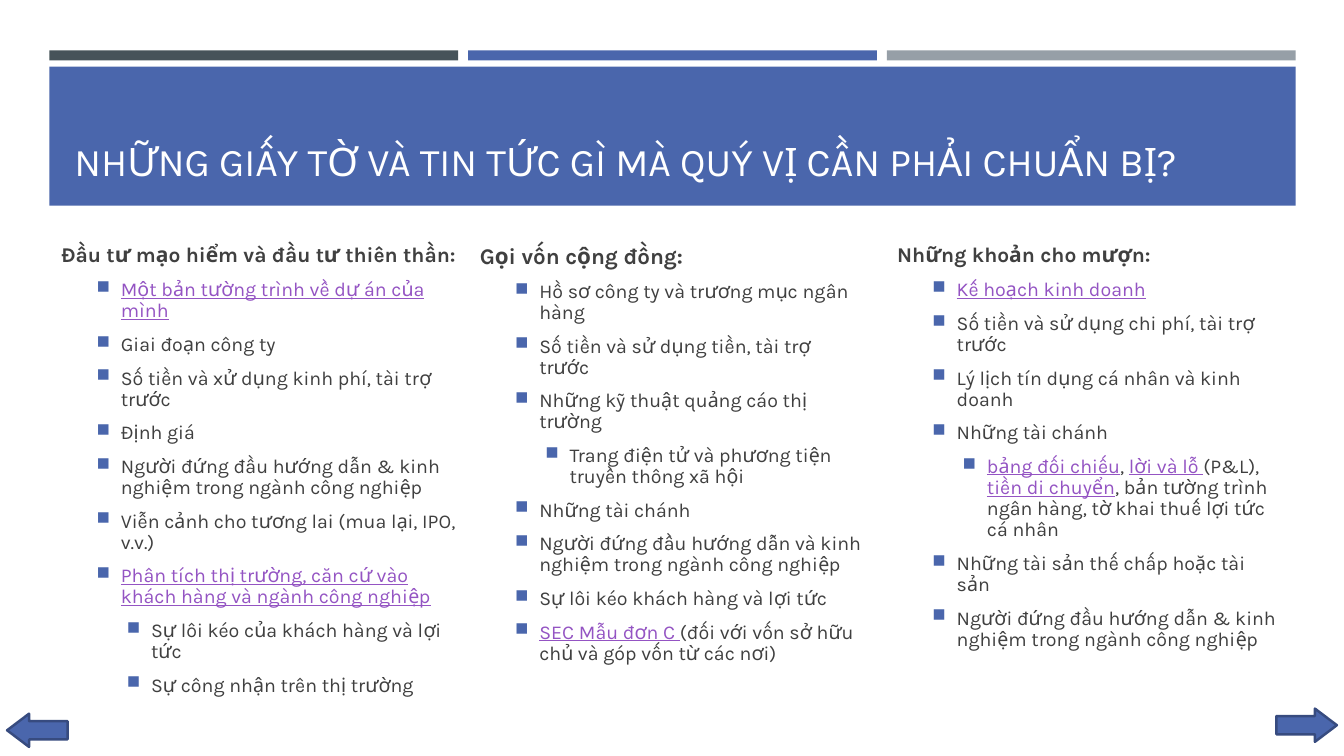
from lxml import etree
from pptx import Presentation
from pptx.dml.color import RGBColor
from pptx.enum.shapes import MSO_SHAPE
from pptx.enum.text import MSO_ANCHOR
from pptx.oxml.ns import qn
from pptx.util import Emu, Pt

RECTANGLE = MSO_SHAPE.RECTANGLE
RIGHT_ARROW = MSO_SHAPE.RIGHT_ARROW
BOTTOM = MSO_ANCHOR.BOTTOM

PX = 9144  # 100 px to the inch
FONT = "Karla"
BLUE, SLATE, GREY = "4A66AC", "465359", "969FA7"
DARK_BLUE, TEXT, LINK, WHITE = "374B7F", "404040", "9454C3", "FFFFFF"

TITLE = "NHỮNG GIẤY TỜ VÀ TIN TỨC GÌ MÀ QUÝ VỊ CẦN PHẢI CHUẨN BỊ?"

# Each item is (level, text); underscores enclose the parts styled as links.
COLUMNS = [
    ((51, 238, 423, 470), "Đầu tư mạo hiểm và đầu tư thiên thần:", 15, [
        (1, "_Một bản tường trình về dự án của mình_"),
        (1, "Giai đoạn công ty"),
        (1, "Số tiền và xử dụng kinh phí, tài trợ trước"),
        (1, "Định giá"),
        (1, "Người đứng đầu hướng dẫn & kinh nghiệm trong ngành công nghiệp"),
        (1, "Viễn cảnh cho tương lai (mua lại, IPO, v.v.)"),
        (1, "_Phân tích thị trường, căn cứ vào khách hàng và ngành công nghiệp_"),
        (2, "Sự lôi kéo của khách hàng và lợi tức"),
        (2, "Sự công nhận trên thị trường"),
    ]),
    ((466, 238, 402, 421), "Gọi vốn cộng đồng:", 16, [
        (1, "Hồ sơ công ty và trương mục ngân hàng"),
        (1, "Số tiền và sử dụng tiền, tài trợ trước"),
        (1, "Những kỹ thuật quảng cáo thị trường"),
        (2, "Trang điện tử và phương tiện truyền thông xã hội"),
        (1, "Những tài chánh"),
        (1, "Người đứng đầu hướng dẫn và kinh nghiệm trong ngành công nghiệp"),
        (1, "Sự lôi kéo khách hàng và lợi tức"),
        (1, "_SEC Mẫu đơn C _(đối với vốn sở hữu chủ và góp vốn từ các nơi)"),
    ]),
    ((880, 238, 402, 440), "Những khoản cho mượn:", 15, [
        (1, "_Kế hoạch kinh doanh_"),
        (1, "Số tiền và sử dụng chi phí, tài trợ trước"),
        (1, "Lý lịch tín dụng cá nhân và kinh doanh"),
        (1, "Những tài chánh"),
        (2, "_bảng đối chiếu_, _lời và lỗ _(P&L), _tiền di chuyển_, "
            "bản tường trình ngân hàng, tờ khai thuế lợi tức cá nhân"),
        (1, "Những tài sản thế chấp hoặc tài sản"),
        (1, "Người đứng đầu hướng dẫn & kinh nghiệm trong ngành công nghiệp"),
    ]),
]


def color(hex_string):
    return RGBColor.from_string(hex_string)


def px(*lengths):
    return [Emu(round(length * PX)) for length in lengths]


def add_filled_shape(slide, kind, box, fill):
    shape = slide.shapes.add_shape(kind, *px(*box))
    shape.shadow.inherit = False
    shape.fill.solid()
    shape.fill.fore_color.rgb = color(fill)
    shape.line.fill.background()
    return shape


def add_text_box(slide, box):
    text_frame = slide.shapes.add_textbox(*px(*box)).text_frame
    text_frame.word_wrap = True
    return text_frame


def format_run(run, size, hex_string, bold=False, underline=False):
    run.font.name = FONT
    run.font.size = Pt(size)
    run.font.color.rgb = color(hex_string)
    run.font.bold = bold
    run.font.underline = underline


def space_paragraph(paragraph, size):
    paragraph.line_spacing = 0.9
    paragraph.space_before = Pt(0.2 * size)
    paragraph.space_after = Pt(6)


def set_bullet(paragraph, level):
    paragraph.level = level
    properties = paragraph._p.get_or_add_pPr()
    left, hanging = px(29 + 30 * level, -24)
    properties.set("marL", str(left))
    properties.set("indent", str(hanging))
    bullet_color = etree.SubElement(properties, qn("a:buClr"))
    etree.SubElement(bullet_color, qn("a:srgbClr"), val=BLUE)
    etree.SubElement(properties, qn("a:buSzPct"), val="92000")
    etree.SubElement(properties, qn("a:buChar"), char="■")


def add_header(slide, box):
    left, top, width, height = box
    # Three thin bars with equal gaps above the title band
    gap, bar_height, band_offset = 10, 10, 16
    bar_width = (width - 2 * gap) / 3
    for index, fill in enumerate((SLATE, BLUE, GREY)):
        bar_left = left + index * (bar_width + gap)
        add_filled_shape(slide, RECTANGLE, (bar_left, top, bar_width, bar_height), fill)
    band_top, band_height = top + band_offset, height - band_offset
    add_filled_shape(slide, RECTANGLE, (left, band_top, width, band_height), BLUE)

    # Title
    text_frame = add_text_box(
        slide, (left + 15, band_top + 14, width - 30, band_height - 30))
    text_frame.vertical_anchor = BOTTOM
    text_frame.text = TITLE
    format_run(text_frame.paragraphs[0].runs[0], 28, WHITE)


def add_column(slide, box, heading, heading_size, items):
    text_frame = add_text_box(slide, box)
    text_frame.text = heading
    paragraph = text_frame.paragraphs[0]
    space_paragraph(paragraph, heading_size)
    format_run(paragraph.runs[0], heading_size, TEXT, bold=True)
    for level, text in items:
        paragraph = text_frame.add_paragraph()
        space_paragraph(paragraph, 14)
        set_bullet(paragraph, level)
        for index, part in enumerate(text.split("_")):
            if part:
                is_link = index % 2 == 1
                run = paragraph.add_run()
                run.text = part
                format_run(run, 14, LINK if is_link else TEXT, underline=is_link)


def add_navigation_arrow(slide, box, rotation):
    arrow = add_filled_shape(slide, RIGHT_ARROW, box, BLUE)
    arrow.adjustments[0] = 0.55
    arrow.adjustments[1] = 0.66
    arrow.line.color.rgb = color(DARK_BLUE)
    arrow.line.width = Pt(1.75)
    arrow.rotation = rotation


def main():
    presentation = Presentation()
    presentation.slide_width, presentation.slide_height = px(1333, 750)
    slide = presentation.slides.add_slide(presentation.slide_layouts[6])
    add_header(slide, (49, 50, 1236, 154))
    for box, heading, heading_size, items in COLUMNS:
        add_column(slide, box, heading, heading_size, items)
    add_navigation_arrow(slide, (1266, 703, 60, 33), 0)
    add_navigation_arrow(slide, (7, 708, 60, 33), 180)
    presentation.save("out.pptx")


if __name__ == "__main__":
    main()
